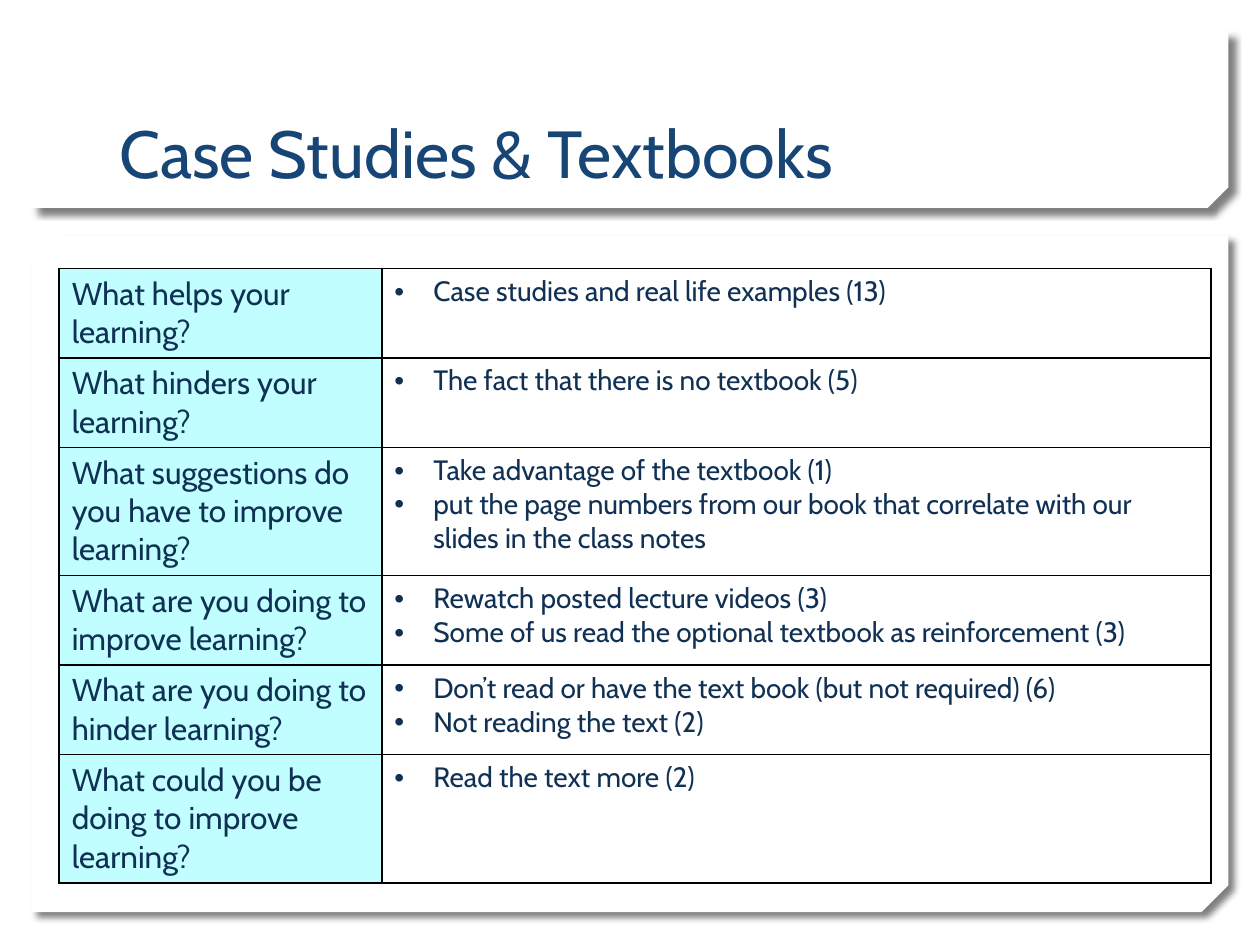
from lxml import etree
from pptx import Presentation
from pptx.dml.color import RGBColor
from pptx.enum import shapes, text
from pptx.oxml import parse_xml
from pptx.oxml.ns import qn
from pptx.util import Inches, Pt

NS = 'xmlns:a="http://schemas.openxmlformats.org/drawingml/2006/main"'
HUES = {"white": "FFFFFF", "title": "174576", "body": "103154",
        "aqua": "C0FEFF", "black": "000000"}


def hue(name):
    return RGBColor.from_string(HUES[name])


def write(frame, lines, size, color="body", bullet=False):
    for i, line in enumerate(lines):
        para = frame.paragraphs[0] if i == 0 else frame.add_paragraph()
        run = para.add_run()
        run.text = line
        run.font.name = "Cabin"
        run.font.size = Pt(size)
        run.font.color.rgb = hue(color)
        if bullet:
            props = para._p.get_or_add_pPr()
            props.set("marL", str(Inches(0.31)))
            props.set("indent", str(-Inches(0.31)))
            etree.SubElement(props, qn("a:buFont")).set("typeface", "Arial")
            etree.SubElement(props, qn("a:buChar")).set("char", "•")


deck = Presentation()
deck.slide_width, deck.slide_height = Inches(10), Inches(7.5)
slide = deck.slides.add_slide(deck.slide_layouts[6])

# White panels with a cut corner and a soft shadow
for top, high, snip in [(1.87, 5.37, 0.04), (0.25, 1.4, 0.117)]:
    panel = slide.shapes.add_shape(
        shapes.MSO_SHAPE.SNIP_2_DIAG_RECTANGLE,
        Inches(0.25), Inches(top), Inches(9.5), Inches(high))
    panel.adjustments[0], panel.adjustments[1] = 0, snip
    panel.fill.solid()
    panel.fill.fore_color.rgb = hue("white")
    panel.line.fill.background()
    props = panel._element.spPr
    props.find(qn("a:xfrm")).set("flipV", "1")
    props.append(parse_xml(
        f'<a:effectLst {NS}><a:outerShdw blurRad="{Pt(4)}" dist="{Pt(5)}" '
        f'dir="2700000" algn="tl" rotWithShape="0">'
        f'<a:srgbClr val="{HUES["black"]}"><a:alpha val="50000"/></a:srgbClr>'
        f'</a:outerShdw></a:effectLst>'))

# Title
box = slide.shapes.add_textbox(
    Inches(0.85), Inches(0.32), Inches(8.29), Inches(1.25))
box.text_frame.word_wrap = True
box.text_frame.vertical_anchor = text.MSO_ANCHOR.BOTTOM
write(box.text_frame, ["Case Studies & Textbooks"], 38, "title")

# Questions with their answers
rows = [
    ("What helps your learning?",
     ["Case studies and real life examples (13)"], 0.71),
    ("What hinders your learning?",
     ["The fact that there is no textbook (5)"], 0.71),
    ("What suggestions do you have to improve learning?",
     ["Take advantage of the textbook (1)",
      "put the page numbers from our book that correlate with our "
      "slides in the class notes"], 1.02),
    ("What are you doing to improve learning?",
     ["Rewatch posted lecture videos (3)",
      "Some of us read the optional textbook as reinforcement (3)"], 0.71),
    ("What are you doing to hinder learning?",
     ["Don’t read or have the text book (but not required) (6)",
      "Not reading the text (2)"], 0.71),
    ("What could you be doing to improve learning?",
     ["Read the text more (2)"], 1.02),
]
table = slide.shapes.add_table(
    len(rows), 2, Inches(0.47), Inches(2.13), Inches(9.14),
    Inches(sum(row[2] for row in rows))).table
table.first_row = table.horz_banding = False
table.columns[0].width, table.columns[1].width = Inches(2.56), Inches(6.58)

for i, (ask, replies, high) in enumerate(rows):
    table.rows[i].height = Inches(high)
    left, right = table.cell(i, 0), table.cell(i, 1)
    write(left.text_frame, [ask], 18)
    write(right.text_frame, replies, 16, bullet=True)
    for cell in (left, right):
        props = cell._tc.get_or_add_tcPr()
        for side in "LRTB":
            props.append(parse_xml(
                f'<a:ln{side} {NS} w="{Pt(1)}"><a:solidFill>'
                f'<a:srgbClr val="{HUES["black"]}"/></a:solidFill></a:ln{side}>'))
    left.fill.solid()
    left.fill.fore_color.rgb = hue("aqua")
    right.fill.background()

deck.save("out.pptx")
